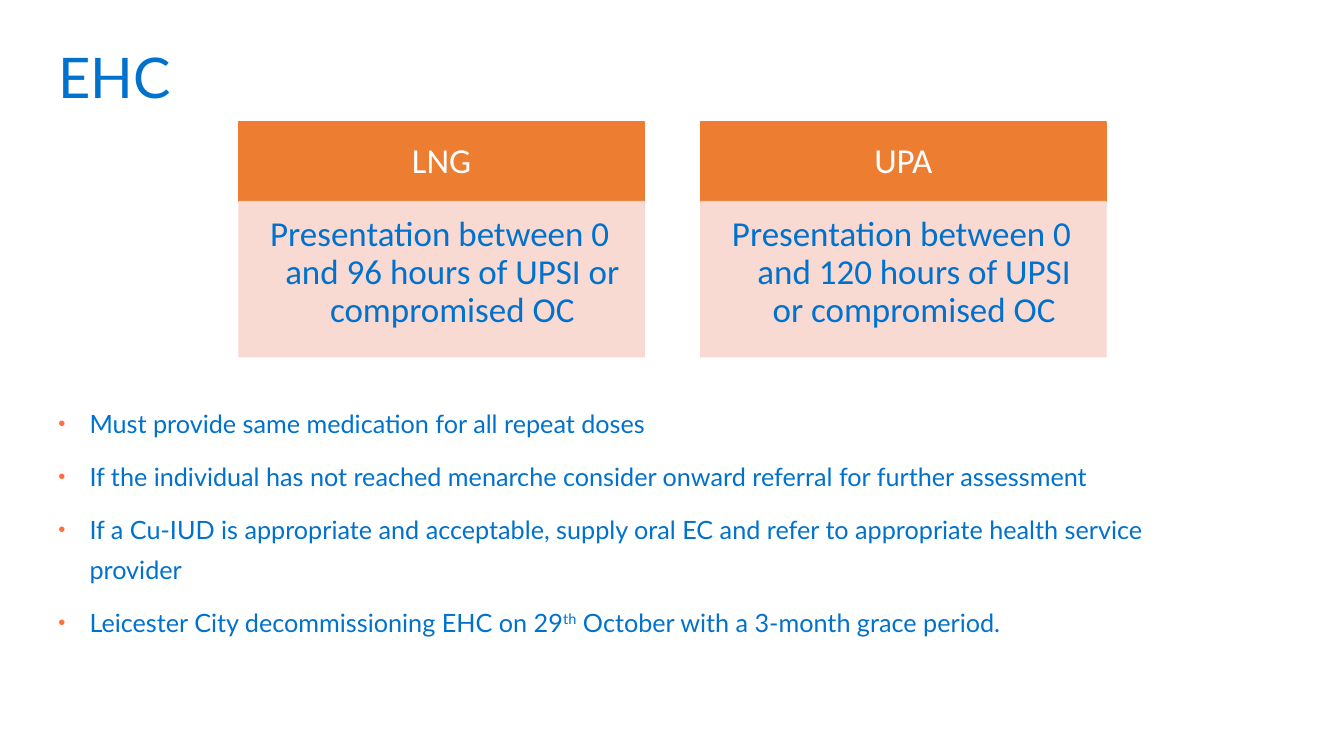
from lxml.etree import SubElement
from pptx import Presentation
from pptx.dml.color import RGBColor
from pptx.enum.shapes import MSO_SHAPE as Shape
from pptx.enum.text import MSO_ANCHOR as Anchor, MSO_AUTO_SIZE as AutoSize, PP_ALIGN as Align
from pptx.oxml.ns import qn
from pptx.util import Inches, Pt

TITLE = "EHC"
CARDS = [
    ("LNG", "Presentation between 0 and 96 hours of UPSI or compromised OC"),
    ("UPA", "Presentation between 0 and 120 hours of UPSI or compromised OC"),
]
# Each bullet is a list of (text, is superscript)
BULLETS = [
    [("Must provide same medication for all repeat doses", False)],
    [("If the individual has not reached menarche consider onward referral "
      "for further assessment", False)],
    [("If a Cu-IUD is appropriate and acceptable, supply oral EC and refer to "
      "appropriate health service provider", False)],
    [("Leicester City decommissioning EHC on 29", False), ("th", True),
     (" October with a 3-month grace period.", False)],
]
COLORS = {"blue": "0072CE", "orange": "ED7D31", "pink": "F8D7CE",
          "bullet": "FF6E3B", "white": "FFFFFF"}

LEFT, WIDTH = 0.48, 11.13
CARD_LEFT, CARD_TOP, CARD_WIDTH, CARD_STEP = 2.37, 1.21, 4.02, 4.58
HEAD_HEIGHT, DETAIL_HEIGHT = 0.79, 1.54


def rgb(name):
    return RGBColor.from_string(COLORS[name])


def add_text(para, text, *, size, font, color, spacing, align=Align.LEFT, superscript=False):
    para.alignment = align
    para.line_spacing = spacing
    span = para.add_run()
    span.text = text
    span.font.size = Pt(size)
    span.font.name = font
    span.font.color.rgb = rgb(color)
    if superscript:
        span.font._element.set("baseline", "30000")


def set_frame(frame, anchor, insets):
    frame.word_wrap = True
    frame.auto_size = AutoSize.NONE
    frame.vertical_anchor = anchor
    (frame.margin_left, frame.margin_top,
     frame.margin_right, frame.margin_bottom) = map(Inches, insets)


def set_hanging(para, indent):
    props = para._p.get_or_add_pPr()
    props.set("marL", str(Inches(indent)))
    props.set("indent", str(-Inches(indent)))
    return props


def add_bullet(para):
    props = set_hanging(para, 0.31)
    color = SubElement(props, qn("a:buClr"))
    SubElement(color, qn("a:srgbClr"), val=COLORS["bullet"])
    SubElement(props, qn("a:buSzPct"), val="80000")
    SubElement(props, qn("a:buFont"), typeface="Arial")
    SubElement(props, qn("a:buChar"), char="•")


def add_panel(page, text, left, top, height, *, fill, color, anchor, insets,
              indent=0, alpha=100):
    box = page.shapes.add_shape(Shape.RECTANGLE, Inches(left), Inches(top),
                                Inches(CARD_WIDTH), Inches(height))
    box.shadow.inherit = False
    box.fill.solid()
    box.line.width = Pt(1)
    for paint in (box.fill.fore_color, box.line.color):
        paint.rgb = rgb(fill)
    if alpha < 100:
        for tone in box._element.spPr.iter(qn("a:srgbClr")):
            SubElement(tone, qn("a:alpha"), val=str(alpha * 1000))
    set_frame(box.text_frame, anchor, insets)
    para = box.text_frame.paragraphs[0]
    if indent:
        set_hanging(para, indent)
    add_text(para, text, size=25, font="Calibri", color=color, spacing=0.9,
             align=Align.CENTER)


def main():
    deck = Presentation()
    deck.slide_width, deck.slide_height = Inches(13.33), Inches(7.5)
    page = deck.slides.add_slide(deck.slide_layouts[5])

    title = page.shapes.title
    title.left, title.top = Inches(LEFT), Inches(0.31)
    title.width, title.height = Inches(WIDTH), Inches(1.04)
    set_frame(title.text_frame, Anchor.TOP, (0.1, 0.05, 0.1, 0.05))
    add_text(title.text_frame.paragraphs[0], TITLE, size=40, font="Lato",
             color="blue", spacing=1.1)

    body = page.shapes.add_textbox(Inches(LEFT), Inches(3.91), Inches(WIDTH), Inches(3.24))
    set_frame(body.text_frame, Anchor.TOP, (0.1, 0.05, 0.1, 0.05))
    for number, spans in enumerate(BULLETS):
        para = body.text_frame.add_paragraph() if number else body.text_frame.paragraphs[0]
        add_bullet(para)
        para.space_before = Pt(10 if number else 0)
        for text, superscript in spans:
            add_text(para, text, size=18, font="Lato", color="blue", spacing=1.3,
                     superscript=superscript)

    for column, (heading, detail) in enumerate(CARDS):
        left = CARD_LEFT + column * CARD_STEP
        add_panel(page, heading, left, CARD_TOP, HEAD_HEIGHT, fill="orange", color="white",
                  anchor=Anchor.MIDDLE, insets=(0.19, 0.11, 0.19, 0.11))
        add_panel(page, detail, left, CARD_TOP + HEAD_HEIGHT, DETAIL_HEIGHT, fill="pink",
                  color="blue", anchor=Anchor.TOP, insets=(0.15, 0.15, 0.19, 0.22),
                  indent=0.25, alpha=90)

    deck.save("out.pptx")


if __name__ == "__main__":
    main()
